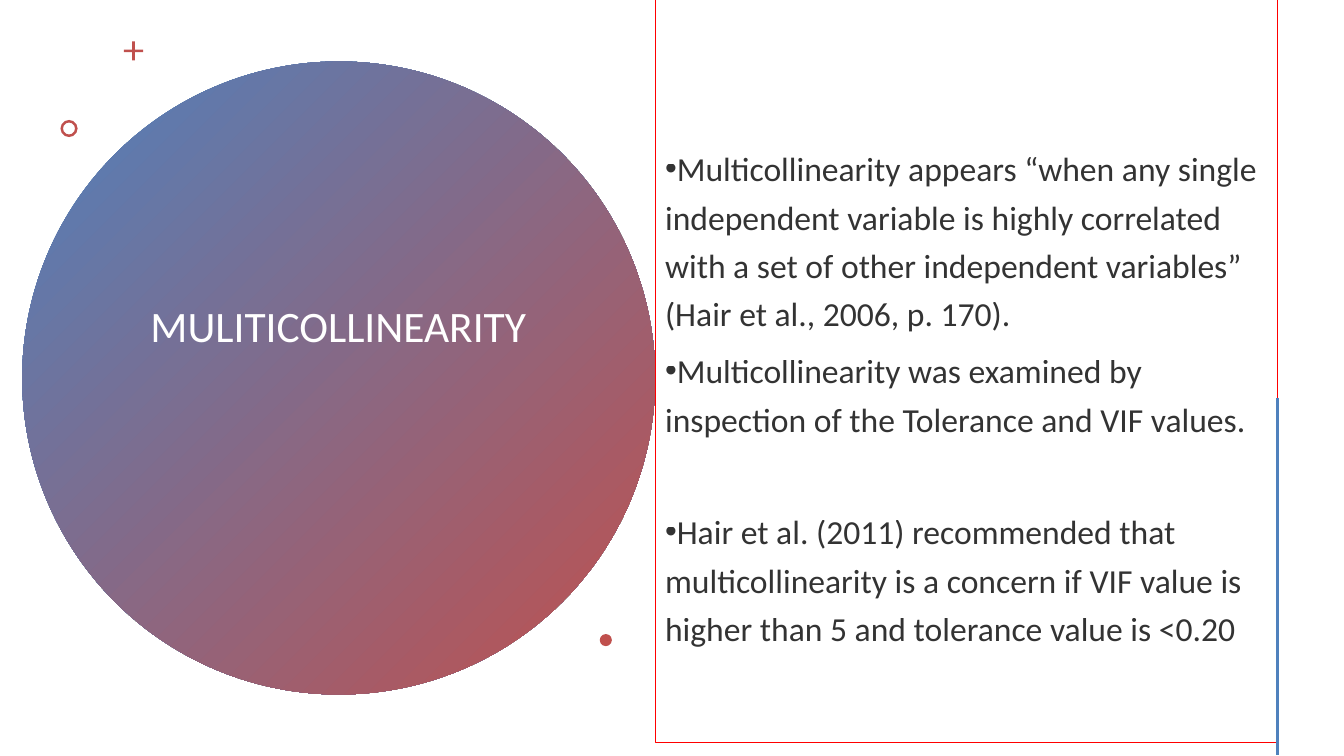
from dataclasses import dataclass

from lxml import etree
from pptx import Presentation
from pptx.dml.color import RGBColor
from pptx.enum.shapes import MSO_CONNECTOR, MSO_SHAPE
from pptx.enum.text import MSO_ANCHOR, PP_ALIGN
from pptx.oxml.ns import qn
from pptx.util import Inches, Pt

OVAL, RING = MSO_SHAPE.OVAL, MSO_SHAPE.DONUT
PLUS, RECTANGLE = MSO_SHAPE.CROSS, MSO_SHAPE.RECTANGLE
STRAIGHT = MSO_CONNECTOR.STRAIGHT
MIDDLE = MSO_ANCHOR.MIDDLE
LEFT, CENTER = PP_ALIGN.LEFT, PP_ALIGN.CENTER
COLUMNS, ROWS = 160, 90


@dataclass(frozen=True)
class Theme:
    font: str = "Calibri"
    title_size: int = 31
    body_size: int = 24
    blue: RGBColor = RGBColor(0x4F, 0x81, 0xBD)
    red: RGBColor = RGBColor(0xC0, 0x50, 0x4D)
    frame: RGBColor = RGBColor(0xFF, 0x00, 0x00)
    title: RGBColor = RGBColor(0xFF, 0xFF, 0xFF)
    body: RGBColor = RGBColor(0x00, 0x00, 0x00)
    body_opacity: int = 80


class SlideBuilder:
    """Draws styled elements on one slide laid out as a fine grid."""

    def __init__(self, deck, theme):
        self.theme = theme
        self.page = deck.slides.add_slide(deck.slide_layouts[6])
        self.column = deck.slide_width / COLUMNS
        self.row = deck.slide_height / ROWS

    def place(self, left, top, width, height):
        return (round(left * self.column), round(top * self.row),
                round(width * self.column), round(height * self.row))

    def shape(self, kind, area, fill=None, adjustment=None):
        shape = self.page.shapes.add_shape(kind, *self.place(*area))
        shape.shadow.inherit = False
        shape.line.fill.background()
        if fill is None:
            shape.fill.background()
        else:
            shape.fill.solid()
            shape.fill.fore_color.rgb = fill
        if adjustment is not None:
            shape.adjustments[0] = adjustment
        return shape

    def gradient_circle(self, area):
        circle = self.shape(OVAL, area)
        circle.fill.gradient()
        circle.fill.gradient_angle = 315
        for stop, color in zip(circle.fill.gradient_stops, (self.theme.blue, self.theme.red)):
            stop.color.rgb = color

    def span(self, para, text, size, color):
        span = para.add_run()
        span.text = text
        span.font.name = self.theme.font
        span.font.size = Pt(size)
        span.font.color.rgb = color
        return span

    def title(self, text, area):
        box = self.page.shapes.add_textbox(*self.place(*area))
        frame = box.text_frame
        frame.word_wrap = True
        frame.vertical_anchor = MIDDLE
        frame.margin_bottom = Inches(1.03)
        para = frame.paragraphs[0]
        para.alignment = CENTER
        para.line_spacing = 0.9
        self.span(para, text, self.theme.title_size, self.theme.title)

    def bullet_panel(self, items, area):
        panel = self.shape(RECTANGLE, area)
        panel.line.color.rgb = self.theme.frame
        panel.line.width = Pt(0.75)
        frame = panel.text_frame
        frame.word_wrap = True
        frame.vertical_anchor = MIDDLE
        frame.margin_top = Inches(0.5)
        for index, (text, space_before) in enumerate(items):
            para = frame.add_paragraph() if index else frame.paragraphs[0]
            para.alignment = LEFT
            para.line_spacing = 1.2
            para.space_before = Pt(space_before)
            para.space_after = Pt(6)
            properties = para._p.get_or_add_pPr()
            properties.set("marL", "0")
            properties.set("indent", str(-Inches(0.25)))
            etree.SubElement(properties, qn("a:buFont"), typeface="Arial")
            etree.SubElement(properties, qn("a:buChar"), char="•")
            span = self.span(para, text, self.theme.body_size, self.theme.body)
            color = span._r.rPr.find(".//" + qn("a:srgbClr"))
            etree.SubElement(color, qn("a:alpha"), val=str(self.theme.body_opacity * 1000))

    def vertical_line(self, column, top, bottom, color):
        left, start, _, end = self.place(column, top, 0, bottom)
        line = self.page.shapes.add_connector(STRAIGHT, left, start, left, end)
        line.line.color.rgb = color
        line.line.width = Pt(2)
        etree.SubElement(line._element.spPr, qn("a:effectLst"))


def main():
    deck = Presentation()
    deck.slide_width, deck.slide_height = Inches(13.33), Inches(7.5)
    theme = Theme()
    slide = SlideBuilder(deck, theme)
    slide.gradient_circle((2.64, 7.32, 75.36, 75.36))
    slide.title("MULITICOLLINEARITY", (16.32, 16.92, 47.88, 56.04))
    slide.shape(PLUS, (14.76, 4.92, 2.28, 2.28), theme.red, 0.43)
    slide.shape(RING, (7.2, 14.28, 2.04, 2.04), theme.red, 0.15)
    slide.bullet_panel([
        ("Multicollinearity appears “when any single independent variable is highly "
         "correlated with a set of other independent variables” (Hair et al., 2006, p. 170).", 0),
        ("Multicollinearity was examined by inspection of the Tolerance and VIF values.", 0),
        ("Hair et al. (2011) recommended that multicollinearity is a concern if VIF value "
         "is higher than 5 and tolerance value is <0.20", 40),
    ], (78, 0, 74.04, 88.44))
    slide.shape(OVAL, (71.4, 75.48, 1.44, 1.44), theme.red)
    slide.vertical_line(152.04, 47.4, 89.88, theme.blue)
    deck.save("out.pptx")


if __name__ == "__main__":
    main()
